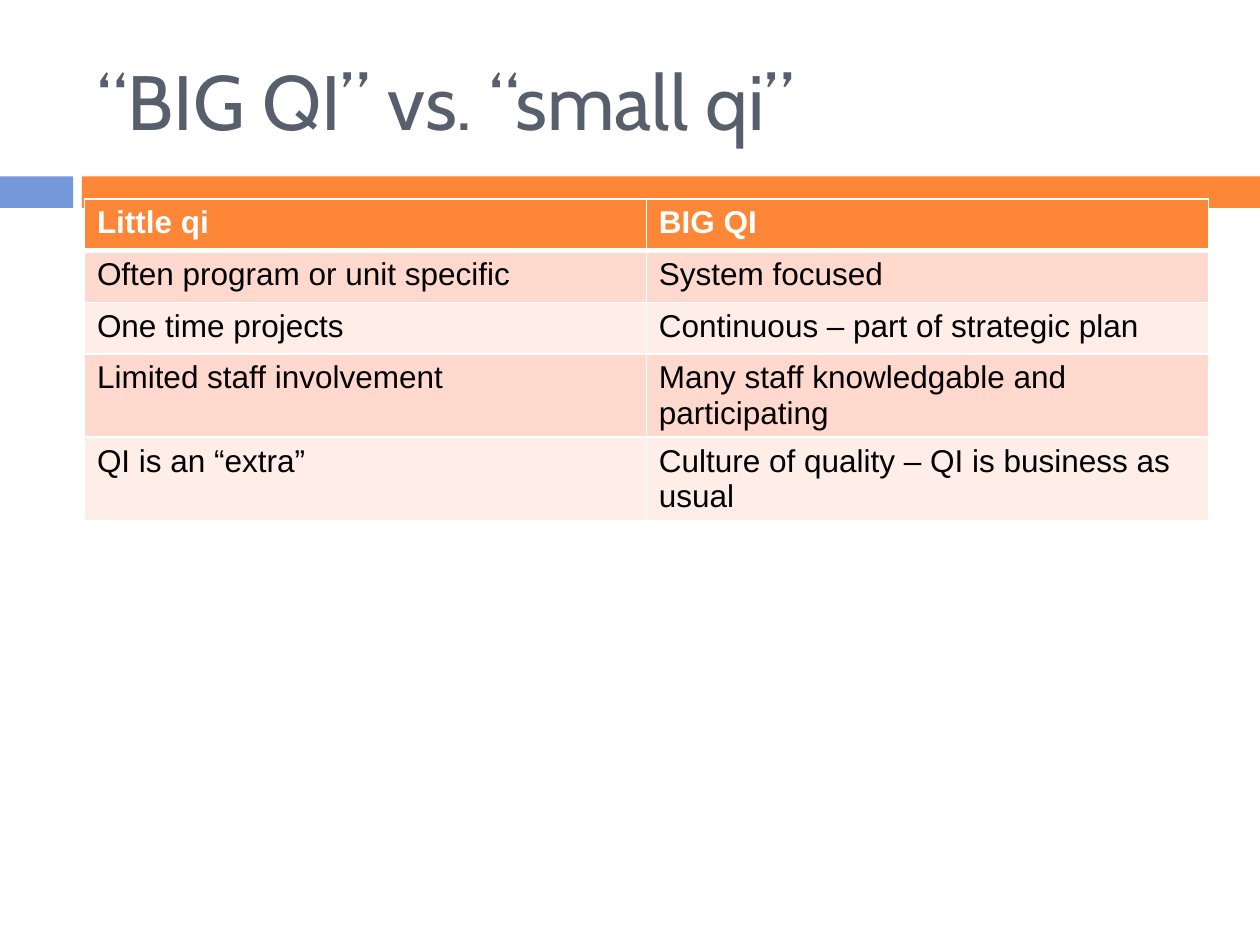
from lxml.etree import SubElement
from pptx import Presentation
from pptx.dml.color import RGBColor
from pptx.enum.shapes import MSO_SHAPE
from pptx.enum.text import MSO_ANCHOR, PP_ALIGN
from pptx.oxml.ns import qn
from pptx.util import Inches, Pt

COLORS = {
    "title": "575F6D",
    "blue": "7598D9",
    "orange": "FE8637",
    "dark_band": "FFD9CE",
    "light_band": "FFEDE8",
    "white": "FFFFFF",
    "black": "000000",
}
COMPARISON = [
    ("Little qi", "BIG QI"),
    ("Often program or unit specific", "System focused"),
    ("One time projects", "Continuous – part of strategic plan"),
    ("Limited staff involvement", "Many staff knowledgable and participating"),
    ("QI is an “extra”", "Culture of quality – QI is business as usual"),
]


def color(name):
    return RGBColor.from_string(COLORS[name])


def add_borders(cell, bottom_width):
    """Draw white borders, 1 pt except at the bottom; call before filling the cell."""
    properties = cell._tc.get_or_add_tcPr()
    for side, width in (("L", 1), ("R", 1), ("T", 1), ("B", bottom_width)):
        border = SubElement(properties, qn(f"a:ln{side}"), w=str(Pt(width)))
        fill = SubElement(border, qn("a:solidFill"))
        SubElement(fill, qn("a:srgbClr"), val=COLORS["white"])


prs = Presentation()
prs.slide_width, prs.slide_height = Inches(10), Inches(7.5)
slide = prs.slides.add_slide(prs.slide_layouts[5])

# Bands below the title
for left, width, band_color in ((0, 0.58, "blue"), (0.65, 9.35, "orange")):
    band = slide.shapes.add_shape(
        MSO_SHAPE.RECTANGLE, Inches(left), Inches(1.4), Inches(width), Inches(0.25))
    band.shadow.inherit = False
    band.fill.solid()
    band.fill.fore_color.rgb = color(band_color)
    band.line.fill.background()

# Title
title = slide.shapes.title
title.left, title.top = Inches(0.67), Inches(0.25)
title.width, title.height = Inches(8.92), Inches(1.08)
title.text_frame.text = "“BIG QI” vs. “small qi”"
title.text_frame.vertical_anchor = MSO_ANCHOR.MIDDLE
heading = title.text_frame.paragraphs[0]
heading.alignment = PP_ALIGN.LEFT
heading.font.name = "Cabin"
heading.font.size = Pt(44)
heading.font.color.rgb = color("title")

# Comparison table; rows with wrapped text grow by themselves
table = slide.shapes.add_table(
    len(COMPARISON), 2, Inches(0.67), Inches(1.58), Inches(8.92), Inches(2.32)).table
for column in table.columns:
    column.width = Inches(4.46)

for row_index, texts in enumerate(COMPARISON):
    is_header = row_index == 0
    table.rows[row_index].height = Inches(0.41)
    if is_header:
        row_color = "orange"
    else:
        row_color = "dark_band" if row_index % 2 else "light_band"
    for column_index, text in enumerate(texts):
        cell = table.cell(row_index, column_index)
        add_borders(cell, bottom_width=3 if is_header else 1)
        cell.fill.solid()
        cell.fill.fore_color.rgb = color(row_color)
        cell.text = text
        font = cell.text_frame.paragraphs[0].font
        font.name = "Arial"
        font.size = Pt(18)
        font.bold = is_header
        font.color.rgb = color("white" if is_header else "black")

prs.save("out.pptx")
